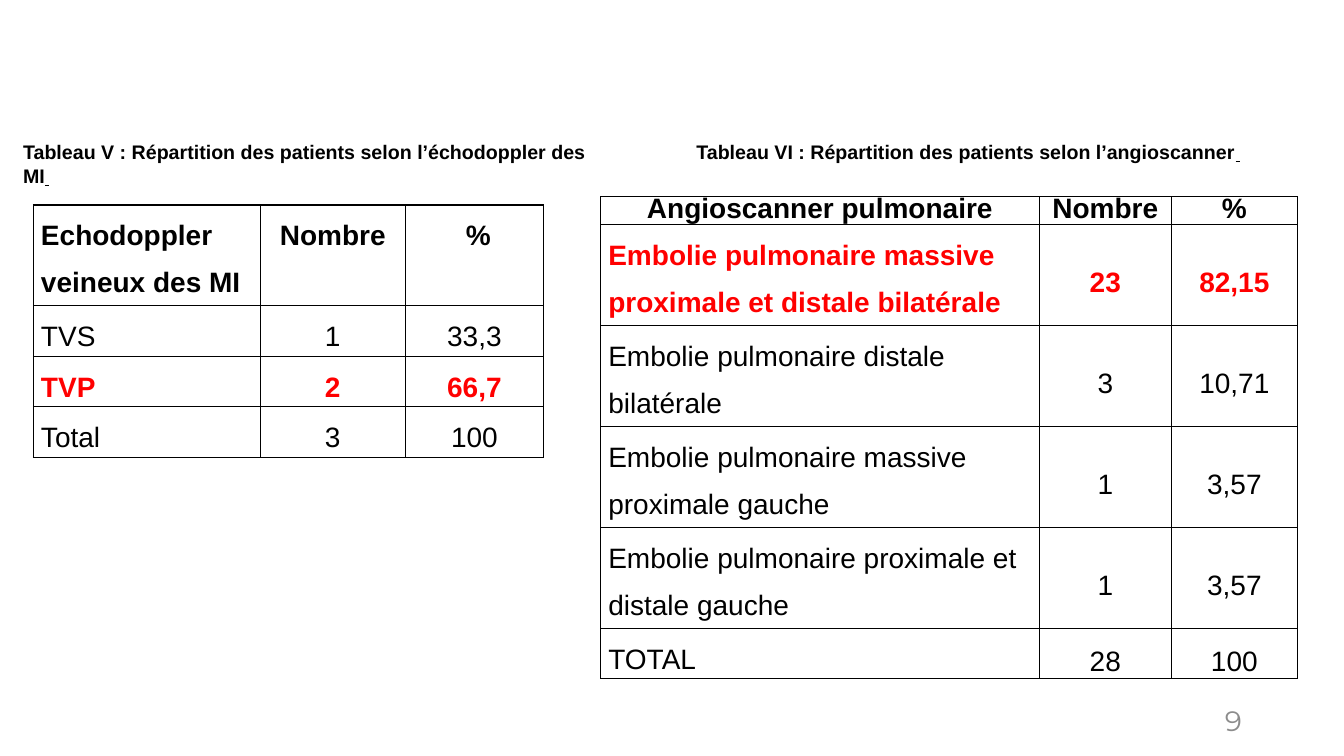
from dataclasses import dataclass

import lxml.etree
import pptx
import pptx.dml.color
import pptx.enum.text
import pptx.oxml.ns
import pptx.util

Pt = pptx.util.Pt
Align = pptx.enum.text.PP_ALIGN
Anchor = pptx.enum.text.MSO_ANCHOR

BLACK, RED, GREY = "000000", "FF0000", "8C8C8C"
SINGLE_ROW, DOUBLE_ROW = 33.4, 66.8


@dataclass(frozen=True)
class Row:
    cells: tuple[str, str, str]
    height: float = SINGLE_ROW
    color: str = BLACK
    bold: bool = False


@dataclass(frozen=True)
class ResultTable:
    left: float
    top: float
    column_widths: tuple[float, ...]
    rows: tuple[Row, ...]
    header_spacing: float | pptx.util.Length
    value_anchor: Anchor


@dataclass(frozen=True)
class Caption:
    left: float
    width: float
    text: str


CAPTIONS = (
    Caption(9.4, 432, "Tableau V : Répartition des patients selon l’échodoppler des MI"),
    Caption(490.3, 410, "Tableau VI : Répartition des patients selon l’angioscanner"),
)

ANGIOSCANNER = ResultTable(
    429.1, 140.6, (313.2, 94.4, 90),
    (
        Row(("Angioscanner pulmonaire", "Nombre", "%"), 20, bold=True),
        Row(("Embolie pulmonaire massive proximale et distale bilatérale", "23", "82,15"),
            DOUBLE_ROW, RED, True),
        Row(("Embolie pulmonaire distale bilatérale", "3", "10,71"), DOUBLE_ROW),
        Row(("Embolie pulmonaire massive proximale gauche", "1", "3,57"), DOUBLE_ROW),
        Row(("Embolie pulmonaire proximale et distale gauche", "1", "3,57"), DOUBLE_ROW),
        Row(("TOTAL", "28", "100")),
    ),
    header_spacing=Pt(20), value_anchor=Anchor.MIDDLE,
)

ECHODOPPLER = ResultTable(
    23.9, 146.4, (162, 103.6, 98.8),
    (
        Row(("Echodoppler veineux des MI", "Nombre", " %"), DOUBLE_ROW, bold=True),
        Row(("TVS", "1", "33,3")),
        Row(("TVP", "2", "66,7"), color=RED, bold=True),
        Row(("Total", "3", "100")),
    ),
    header_spacing=1.5, value_anchor=Anchor.TOP,
)


def rgb(color: str) -> pptx.dml.color.RGBColor:
    return pptx.dml.color.RGBColor.from_string(color)


def set_font(font, name: str, size: float, color: str, bold: bool = False) -> None:
    font.name = name
    font.size = Pt(size)
    font.bold = bold
    font.color.rgb = rgb(color)


def add_borders(cell) -> None:
    properties = cell._tc.get_or_add_tcPr()
    qn = pptx.oxml.ns.qn
    for index, side in enumerate(("lnL", "lnR", "lnT", "lnB")):
        line = lxml.etree.Element(qn(f"a:{side}"), w=str(Pt(1)))
        fill = lxml.etree.SubElement(line, qn("a:solidFill"))
        lxml.etree.SubElement(fill, qn("a:srgbClr"), val=BLACK)
        properties.insert(index, line)


def add_result_table(slide, result: ResultTable) -> None:
    table = slide.shapes.add_table(
        len(result.rows), len(result.column_widths), Pt(result.left), Pt(result.top),
        Pt(sum(result.column_widths)), Pt(sum(row.height for row in result.rows)),
    ).table
    table.first_row = table.horz_banding = False
    for column, width in zip(table.columns, result.column_widths):
        column.width = Pt(width)
    for row_index, row in enumerate(result.rows):
        table.rows[row_index].height = Pt(row.height)
        is_header = row_index == 0
        for column_index, text in enumerate(row.cells):
            is_label = column_index == 0
            cell = table.cell(row_index, column_index)
            cell.text = text
            cell.fill.background()
            cell.margin_left = cell.margin_right = Pt(5.4)
            cell.margin_top = cell.margin_bottom = 0
            cell.vertical_anchor = Anchor.TOP if is_header or is_label else result.value_anchor
            add_borders(cell)
            paragraph = cell.text_frame.paragraphs[0]
            paragraph.line_spacing = result.header_spacing if is_header else 1.5
            paragraph.space_after = Pt(8)
            centred_header = is_header and result.header_spacing != 1.5
            paragraph.alignment = Align.LEFT if is_label and not centred_header else Align.CENTER
            set_font(paragraph.font, "Arial", 20, row.color, row.bold)


def add_caption(slide, caption: Caption) -> None:
    frame = slide.shapes.add_textbox(
        Pt(caption.left), Pt(96.5), Pt(caption.width), Pt(24.5)).text_frame
    frame.word_wrap = True
    title = frame.paragraphs[0].add_run()
    title.text = caption.text
    set_font(title.font, "Arial", 14, BLACK, True)
    underlined_end = frame.paragraphs[0].add_run()
    underlined_end.text = " "
    set_font(underlined_end.font, "Times New Roman", 12, BLACK, True)
    underlined_end.font.underline = True


def add_page_number(slide, number: str) -> None:
    frame = slide.shapes.add_textbox(Pt(678.2), Pt(500.4), Pt(216), Pt(28.8)).text_frame
    frame.word_wrap = True
    frame.vertical_anchor = Anchor.MIDDLE
    paragraph = frame.paragraphs[0]
    paragraph.text = number
    paragraph.alignment = Align.RIGHT
    set_font(paragraph.font, "Montserrat", 20, GREY)


def main() -> None:
    presentation = pptx.Presentation()
    presentation.slide_width, presentation.slide_height = Pt(960), Pt(540)
    slide = presentation.slides.add_slide(presentation.slide_layouts[6])
    add_page_number(slide, "9")
    for result in (ANGIOSCANNER, ECHODOPPLER):
        add_result_table(slide, result)
    for caption in CAPTIONS:
        add_caption(slide, caption)
    presentation.save("out.pptx")


if __name__ == "__main__":
    main()
